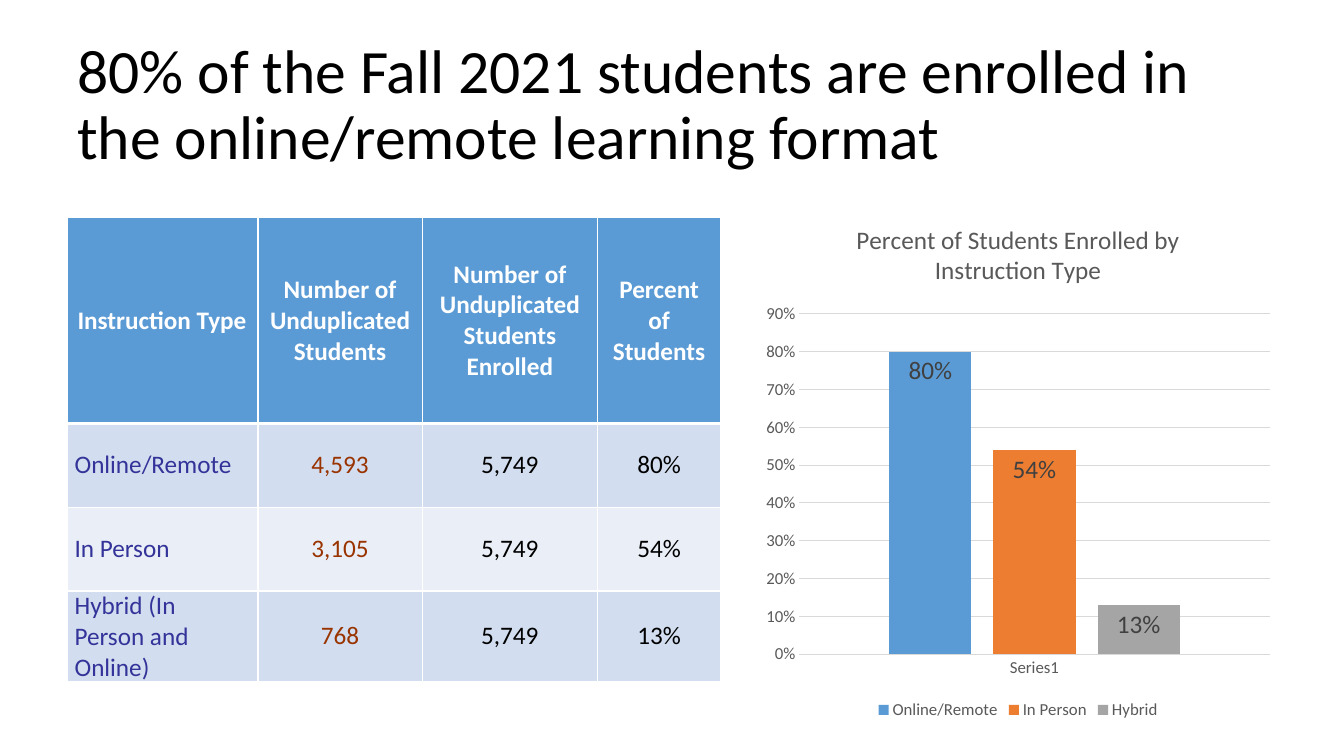
from lxml import etree
from pptx import Presentation
from pptx import util as u
from pptx.chart import data as chart_data
from pptx.dml.color import RGBColor
from pptx.enum import chart as chart_enum
from pptx.enum import text
from pptx.oxml import ns

FONT = "Calibri"
BLUE, WHITE, BLACK = "5B9BD5", "FFFFFF", "000000"
GREY, GRID_GREY = "595959", "D9D9D9"
HEADERS = ["Instruction Type", "Number of Unduplicated Students",
           "Number of Unduplicated Students Enrolled", "Percent of Students"]
ENROLLMENT = [
    ["Online/Remote", "4,593", "5,749", "80%"],
    ["In Person", "3,105", "5,749", "54%"],
    ["Hybrid (In Person and Online)", "768", "5,749", "13%"],
]
COLUMN_WIDTHS = [4.8, 4.14, 4.42, 3.1]
ROW_HEIGHTS = [5.18, 2.11, 2.11, 2.11]
BODY_COLORS = ["333399", "993300", BLACK, BLACK]
BAND_FILLS = ["D2DEEF", "EAEFF7"]
SHARES = [("Online/Remote", 0.8, BLUE), ("In Person", 0.54, "ED7D31"),
          ("Hybrid", 0.13, "A5A5A5")]


def rgb(color):
    return RGBColor.from_string(color)


def set_attributes(target, values):
    for name, value in values.items():
        setattr(target, name, value)


def set_font(font, size, color, bold=False):
    set_attributes(font, {"name": FONT, "size": u.Pt(size), "bold": bold})
    font.color.rgb = rgb(color)


def set_line(line, color):
    line.color.rgb = rgb(color)
    line.width = u.Pt(0.75)


def add_title(slide, words):
    shape = slide.shapes.add_textbox(u.Cm(1.7), u.Cm(0.84), u.Cm(29.21), u.Cm(3.68))
    set_attributes(shape.text_frame, {
        "word_wrap": True, "vertical_anchor": text.MSO_ANCHOR.MIDDLE})
    paragraph = shape.text_frame.paragraphs[0]
    paragraph.line_spacing = 0.9
    run = paragraph.add_run()
    run.text = words
    set_font(run.font, 44, BLACK)


def add_borders(cell, widths):
    properties = cell._tc.get_or_add_tcPr()
    for side, width in widths.items():
        line = etree.SubElement(properties, ns.qn(f"a:ln{side}"), w=str(u.Pt(width)))
        fill = etree.SubElement(line, ns.qn("a:solidFill"))
        etree.SubElement(fill, ns.qn("a:srgbClr"), val=WHITE)


def fill_cell(cell, words, row, column):
    header = row == 0
    add_borders(cell, {"L": 1, "R": 1, "T": 3 if row == 1 else 1, "B": 3 if header else 1})
    cell.fill.solid()
    cell.fill.fore_color.rgb = rgb(BLUE if header else BAND_FILLS[(row - 1) % 2])
    cell.vertical_anchor = text.MSO_ANCHOR.MIDDLE
    if not header and column < 2:
        set_attributes(cell, {"margin_left": u.Cm(0.18), "margin_right": u.Cm(0.18),
                              "margin_top": 0, "margin_bottom": 0})
    paragraph = cell.text_frame.paragraphs[0]
    paragraph.alignment = text.PP_ALIGN.CENTER if column else text.PP_ALIGN.LEFT
    run = paragraph.add_run()
    run.text = words
    set_font(run.font, 18, WHITE if header else BODY_COLORS[column], header)


def add_enrollment_table(slide):
    rows = [HEADERS] + ENROLLMENT
    table = slide.shapes.add_table(
        len(rows), len(HEADERS), u.Cm(1.7), u.Cm(5.49),
        u.Cm(sum(COLUMN_WIDTHS)), u.Cm(sum(ROW_HEIGHTS))).table
    for column, width in zip(table.columns, COLUMN_WIDTHS):
        column.width = u.Cm(width)
    for row, height in zip(table.rows, ROW_HEIGHTS):
        row.height = u.Cm(height)
    for row, values in enumerate(rows):
        for column, words in enumerate(values):
            fill_cell(table.cell(row, column), words, row, column)


def style_axes(chart):
    for axis in (chart.category_axis, chart.value_axis):
        set_attributes(axis, {"major_tick_mark": chart_enum.XL_TICK_MARK.NONE,
                              "minor_tick_mark": chart_enum.XL_TICK_MARK.NONE})
        set_font(axis.tick_labels.font, 12, GREY)
    set_line(chart.category_axis.format.line, GRID_GREY)
    value_axis = chart.value_axis
    set_attributes(value_axis, {"minimum_scale": 0, "maximum_scale": 0.9, "major_unit": 0.1})
    value_axis.format.line.fill.background()
    set_line(value_axis.major_gridlines.format.line, GRID_GREY)
    set_attributes(value_axis.tick_labels, {
        "number_format": "0%", "number_format_is_linked": False})


def style_series(series, color):
    series.format.fill.solid()
    series.format.fill.fore_color.rgb = rgb(color)
    labels = series.data_labels
    set_attributes(labels, {
        "show_value": True, "number_format": "0%", "number_format_is_linked": False,
        "position": chart_enum.XL_LABEL_POSITION.INSIDE_END})
    set_font(labels.font, 18, "404040")


def add_share_chart(slide):
    data = chart_data.CategoryChartData(number_format="0%")
    data.categories = ["Series1"]
    for name, share, color in SHARES:
        data.add_series(name, [share])
    chart = slide.shapes.add_chart(
        chart_enum.XL_CHART_TYPE.COLUMN_CLUSTERED, u.Cm(19.05), u.Cm(5.08),
        u.Cm(13.21), u.Cm(13.16), data).chart
    set_font(chart.font, 10, BLACK)
    chart.has_title = True
    run = chart.chart_title.text_frame.paragraphs[0].add_run()
    run.text = "Percent of Students Enrolled by Instruction Type"
    set_font(run.font, 18, GREY)
    chart.has_legend = True
    set_attributes(chart.legend, {
        "position": chart_enum.XL_LEGEND_POSITION.BOTTOM, "include_in_layout": False})
    set_font(chart.legend.font, 12, GREY)
    style_axes(chart)
    plot = chart.plots[0]
    set_attributes(plot, {"gap_width": 219, "overlap": -27, "vary_by_categories": False})
    for series, (name, share, color) in zip(plot.series, SHARES):
        style_series(series, color)


def main():
    presentation = Presentation()
    set_attributes(presentation, {"slide_width": u.Cm(33.87), "slide_height": u.Cm(19.05)})
    slide = presentation.slides.add_slide(presentation.slide_layouts[6])
    add_title(slide, "80% of the Fall 2021 students are enrolled in "
                     "the online/remote learning format")
    add_enrollment_table(slide)
    add_share_chart(slide)
    presentation.save("out.pptx")


if __name__ == "__main__":
    main()
